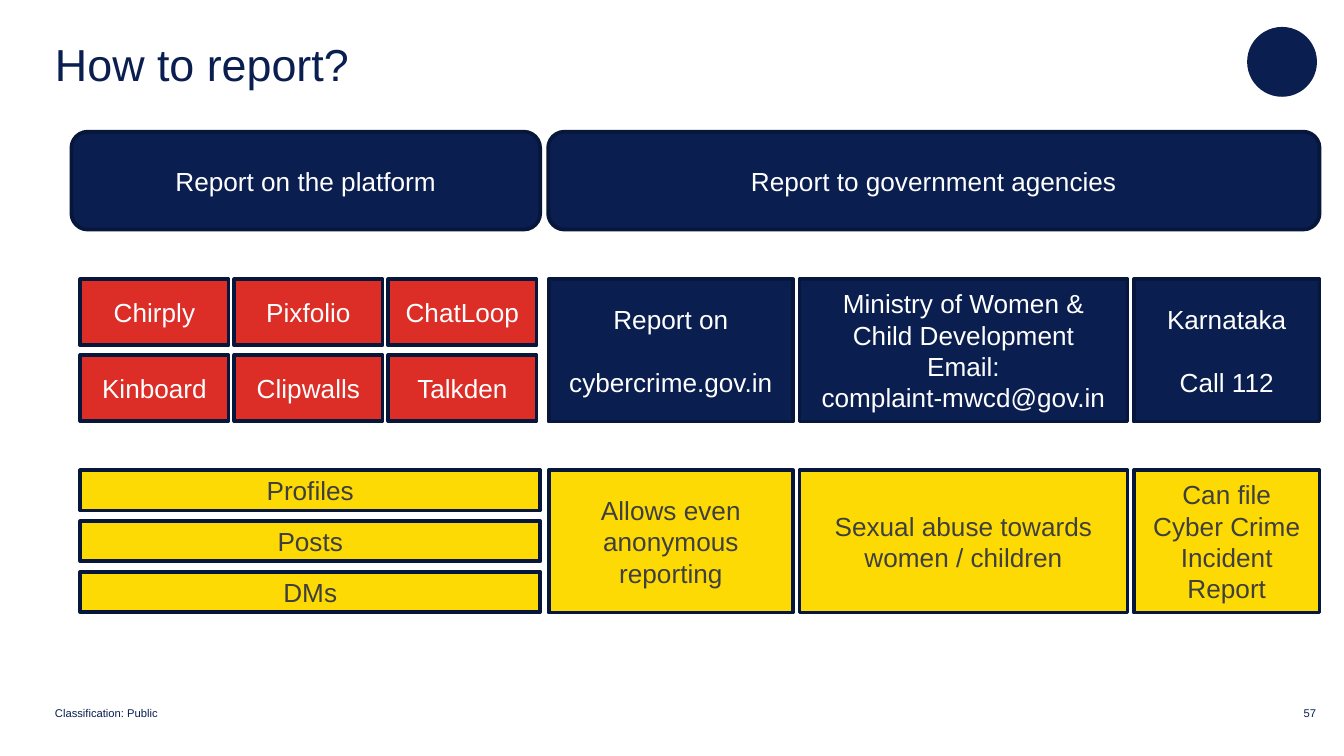
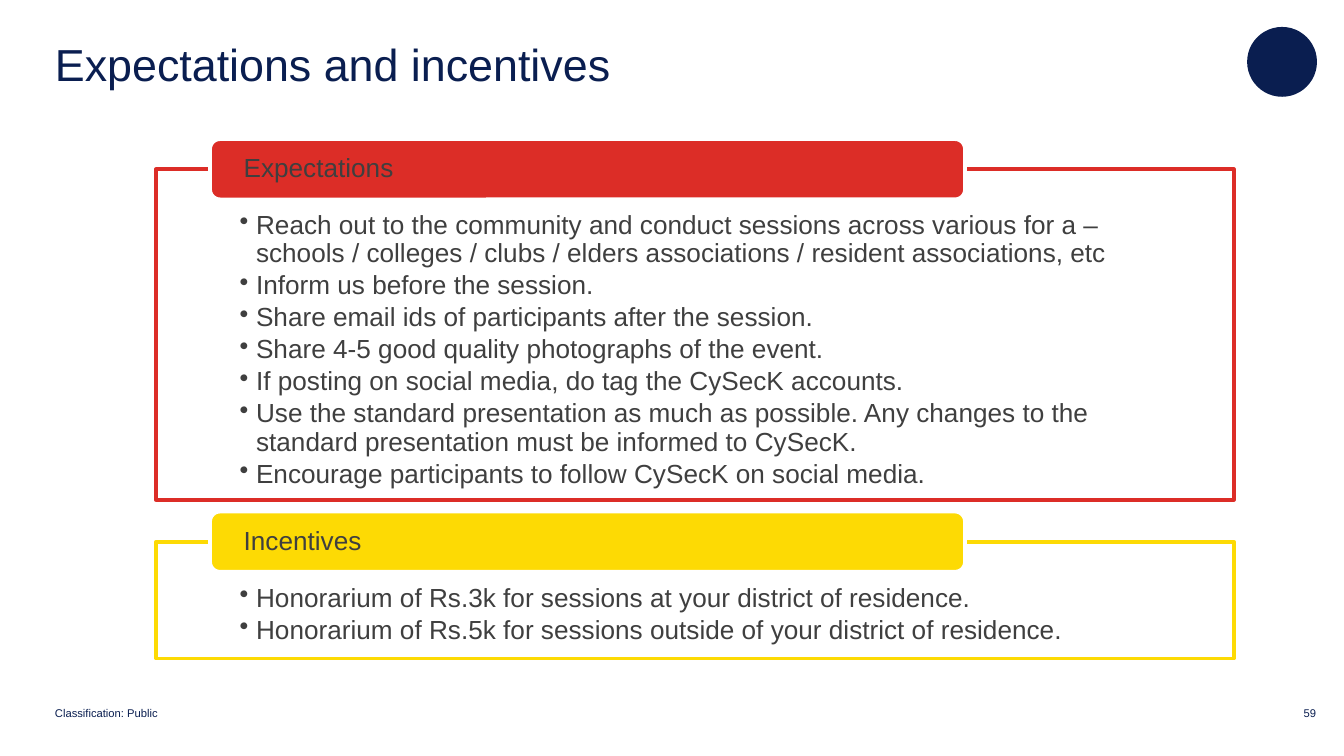
from lxml import etree
from pptx import Presentation
from pptx.dml.color import RGBColor
from pptx.enum.shapes import MSO_SHAPE
from pptx.enum.text import MSO_ANCHOR, PP_ALIGN
from pptx.oxml.ns import qn
from pptx.util import Cm, Pt

RECT, ROUND = MSO_SHAPE.RECTANGLE, MSO_SHAPE.ROUNDED_RECTANGLE
OVAL = MSO_SHAPE.OVAL
TOP, MID = MSO_ANCHOR.TOP, MSO_ANCHOR.MIDDLE
LEFT, CENTER = PP_ALIGN.LEFT, PP_ALIGN.CENTER

FONT = "Arial"
HUES = {"navy": "0A1E50", "edge": "07163B", "red": "DC2D27",
        "gold": "FDDA04", "ink": "3F3F3F", "white": "FFFFFF"}
PAD = (0.25, 0.13, 0.25, 0.13)
FLAT = (0, 0, 0, 0)

PLATFORMS = [["Chirply", "Pixfolio", "ChatLoop"],
             ["Kinboard", "Clipwalls", "Talkden"]]
TARGETS = ["Profiles", "Posts", "DMs"]
# width, contact lines, space between lines in points, remark
AGENCIES = [
    (4.62, ["Report on", "cybercrime.gov.in"], 17,
     "Allows even anonymous reporting"),
    (6.2, ["Ministry of Women & Child Development", "Email:",
           "complaint-mwcd@gov.in"], 0,
     "Sexual abuse towards women / children"),
    (3.51, ["Karnataka", "Call 112"], 17,
     "Can file Cyber Crime Incident Report"),
]
DUTIES = [
    "Reach out to the community and conduct sessions across various for a – "
    "schools / colleges / clubs / elders associations / resident "
    "associations, etc",
    "Inform us before the session.",
    "Share email ids of participants after the session.",
    "Share 4-5 good quality photographs of the event.",
    "If posting on social media, do tag the CySecK accounts.",
    "Use the standard presentation as much as possible. Any changes to the "
    "standard presentation must be informed to CySecK.",
    "Encourage participants to follow CySecK on social media.",
]
REWARDS = [
    "Honorarium of Rs.3k for sessions at your district of residence.",
    "Honorarium of Rs.5k for sessions outside of your district of residence.",
]


def hue(name):
    return RGBColor.from_string(HUES[name])


def dot(par):
    """Make the paragraph a bullet with a hanging indent."""
    props = par._p.get_or_add_pPr()
    props.set("marL", str(Cm(0.31)))
    props.set("indent", str(-Cm(0.31)))
    etree.SubElement(props, qn("a:buChar")).set("char", "•")


def write(shape, lines, color, size=14, align=CENTER, anchor=MID, pad=PAD,
          gap=0, after=0, lead=None, bullet=False, wrap=True):
    frame = shape.text_frame
    frame.word_wrap = wrap
    frame.vertical_anchor = anchor
    (frame.margin_left, frame.margin_top,
     frame.margin_right, frame.margin_bottom) = map(Cm, pad)
    for i, line in enumerate(lines):
        par = frame.add_paragraph() if i else frame.paragraphs[0]
        if bullet:
            dot(par)
        par.alignment = align
        par.space_after = Pt(after)
        if lead:
            par.line_spacing = lead
        if i:
            par.space_before = Pt(gap)
        run = par.add_run()
        run.text = line
        run.font.name = FONT
        run.font.size = Pt(size)
        run.font.color.rgb = hue(color)


def block(slide, box, fill, edge=None, kind=RECT):
    shape = slide.shapes.add_shape(kind, *map(Cm, box))
    shape.shadow.inherit = False
    shape.fill.solid()
    shape.fill.fore_color.rgb = hue(fill)
    if edge:
        shape.line.color.rgb = hue(edge)
        shape.line.width = Pt(2)
    else:
        shape.line.fill.background()
    return shape


def label(slide, box, text, size, **look):
    shape = slide.shapes.add_textbox(*map(Cm, box))
    write(shape, [text], "navy", size, LEFT, pad=FLAT, **look)


def card(slide, box, lines, fill, kind=RECT, gap=0):
    """Draw an outlined block with centred text."""
    shape = block(slide, box, fill, "edge", kind)
    write(shape, lines, "ink" if fill == "gold" else "white", gap=gap)


def base(deck, title, page):
    """Add a slide with title, badge and footer."""
    slide = deck.slides.add_slide(deck.slide_layouts[6])
    block(slide, (23.57, 0.51, 1.32, 1.32), "navy", kind=OVAL)
    for left, width, text in ((1.04, 1.98, "Classification: Public"),
                              (24.64, 0.25, str(page))):
        label(slide, (left, 13.39, width, 0.23), text, 6,
              anchor=TOP, lead=0.85, wrap=False)
    label(slide, (1.04, 0.46, 22.28, 1.5), title, 24)
    return slide


def apps(slide, left, top):
    """Grid of platforms above the bars of what to report there."""
    for row, names in enumerate(PLATFORMS):
        for col, name in enumerate(names):
            box = (left + 2.91 * col, top + 1.43 * row, 2.8, 1.25)
            card(slide, box, [name], "red")
    for row, name in enumerate(TARGETS):
        box = (left, top + 3.61 + 0.96 * row, 8.69, 0.76)
        card(slide, box, [name], "gold")


def bodies(slide, left, top):
    """Columns of agencies, each with its remark below."""
    for width, lines, gap, remark in AGENCIES:
        card(slide, (left, top, width, 2.69), lines, "navy", gap=gap)
        card(slide, (left, top + 3.61, width, 2.69), [remark], "gold")
        left += width + 0.12


def report(deck):
    slide = base(deck, "How to report?", 57)
    for left, width, head in ((1.35, 8.86, "Report on the platform"),
                              (10.36, 14.58, "Report to government agencies")):
        card(slide, (left, 2.49, width, 1.85), [head], "navy", ROUND)
    apps(slide, 1.52, 5.28)
    bodies(slide, 10.37, 5.28)


def panel(slide, box, head, lines, color):
    """Draw a framed bullet list with a tag on its top edge."""
    left, top = box[:2]
    frame = block(slide, box, "white", color)
    write(frame, lines, "ink", align=LEFT, anchor=TOP, lead=0.9, after=2,
          pad=(1.58, 0.81, 1.58, 0.28), bullet=True)
    tag = block(slide, (left + 1.02, top - 0.57, 14.27, 1.14), color,
                "white", ROUND)
    write(tag, [head], "ink", align=LEFT, lead=0.9, pad=(0.58, 0, 0.58, 0))


def terms(deck):
    slide = base(deck, "Expectations and incentives", 59)
    panel(slide, (2.95, 3.2, 20.37, 6.25), "Expectations", DUTIES, "red")
    panel(slide, (2.95, 10.24, 20.37, 2.21), "Incentives", REWARDS, "gold")


def main():
    deck = Presentation()
    deck.slide_width, deck.slide_height = Cm(25.4), Cm(14.29)
    report(deck)
    terms(deck)
    deck.save("out.pptx")


if __name__ == "__main__":
    main()
